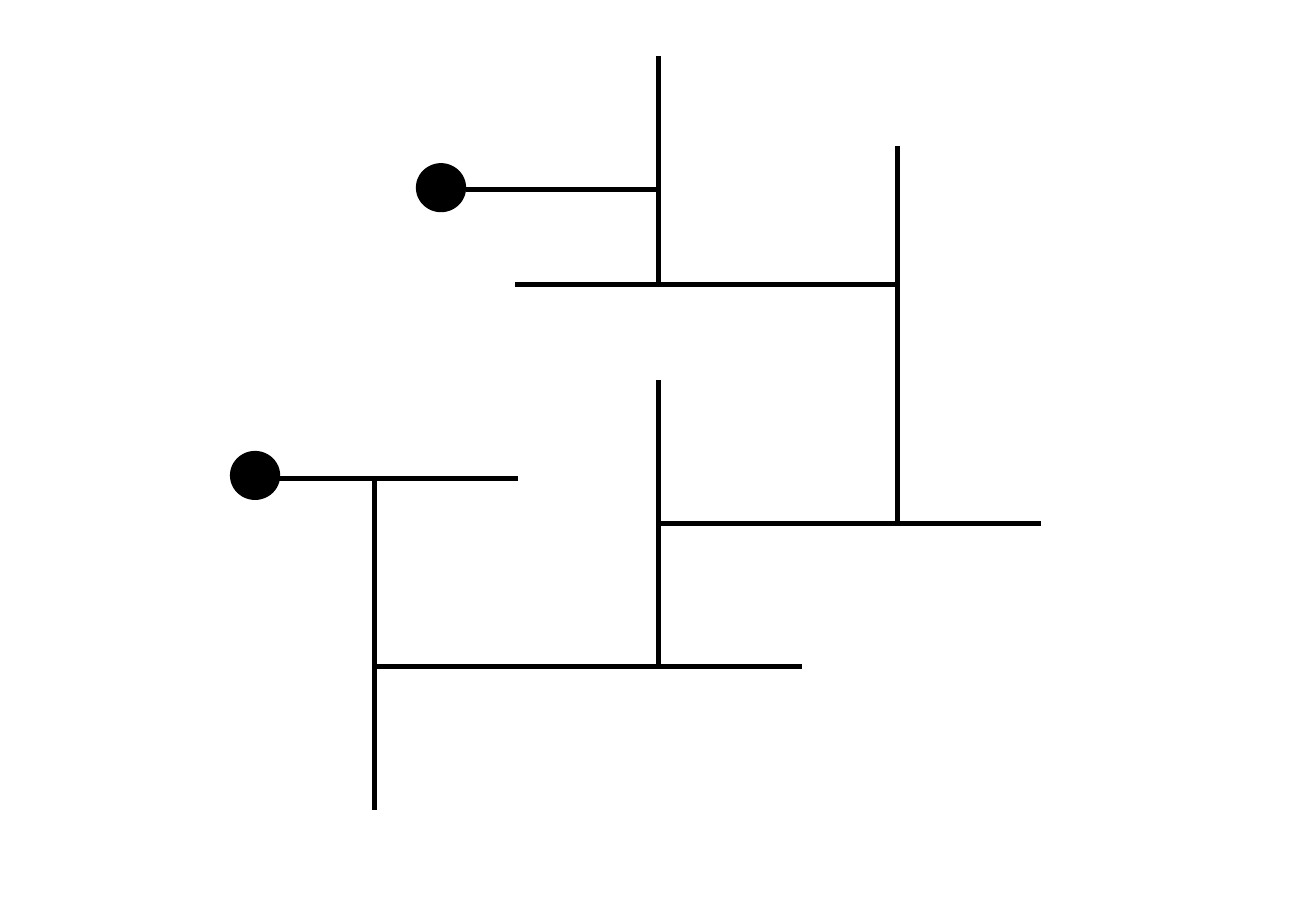
"""Draw a branching line diagram with two round end nodes."""
from lxml.etree import SubElement
from pptx import Presentation
from pptx.dml.color import RGBColor
from pptx.enum.shapes import MSO_CONNECTOR, MSO_SHAPE
from pptx.oxml.ns import qn
from pptx.util import Pt

BLACK = RGBColor(0, 0, 0)
WIDE, HIGH = 780, 540
STUB = 85
LEFT, MID, RIGHT = 221.8, 390.2, 532.1
TOP, UPPER, INNER, LOWER, BASE = 112.3, 168.5, 283.7, 310.3, 395.3

NODES = [(247, 97.2), (136.8, 267.8)]
NODE_W, NODE_H = 28.8, 28.1

LINKS = [
    (RIGHT, LOWER, RIGHT, UPPER),
    (276.5, TOP, MID, TOP),
    (MID, UPPER, MID, TOP),
    (MID, UPPER, RIGHT, UPPER),
    (MID, LOWER, RIGHT, LOWER),
    (MID, BASE, MID, LOWER),
    (LEFT, BASE + 1.4, LEFT, INNER),
    (LEFT, BASE, MID + 1.4, BASE),
    (164.9, INNER, LEFT, INNER),
]
STUBS = [
    (MID, UPPER, -1, 0),
    (MID, 118.1, 0, -1),
    (RIGHT, LOWER, 1, 0),
    (MID, BASE, 1, 0),
    (RIGHT, 171.4, 0, -1),
    (MID, LOWER, 0, -1),
    (LEFT, BASE, 0, 1),
    (LEFT, INNER, 1, 0),
]


def add_node(slide, x, y):
    node = slide.shapes.add_shape(
        MSO_SHAPE.FLOWCHART_CONNECTOR, Pt(x), Pt(y), Pt(NODE_W), Pt(NODE_H))
    node.shadow.inherit = False
    node.fill.solid()
    node.fill.fore_color.rgb = BLACK
    node.line.color.rgb = BLACK
    node.line.width = Pt(1)


def add_line(slide, x1, y1, x2, y2):
    link = slide.shapes.add_connector(
        MSO_CONNECTOR.STRAIGHT, Pt(x1), Pt(y1), Pt(x2), Pt(y2))
    link.line.color.rgb = BLACK
    link.line.width = Pt(3)
    SubElement(link._element.spPr, qn("a:effectLst"))


def main():
    deck = Presentation()
    deck.slide_width, deck.slide_height = Pt(WIDE), Pt(HIGH)
    slide = deck.slides.add_slide(deck.slide_layouts[6])
    for spot in NODES:
        add_node(slide, *spot)
    for ends in LINKS:
        add_line(slide, *ends)
    for x, y, dx, dy in STUBS:
        add_line(slide, x, y, x + dx * STUB, y + dy * STUB)
    deck.save("out.pptx")


if __name__ == "__main__":
    main()
